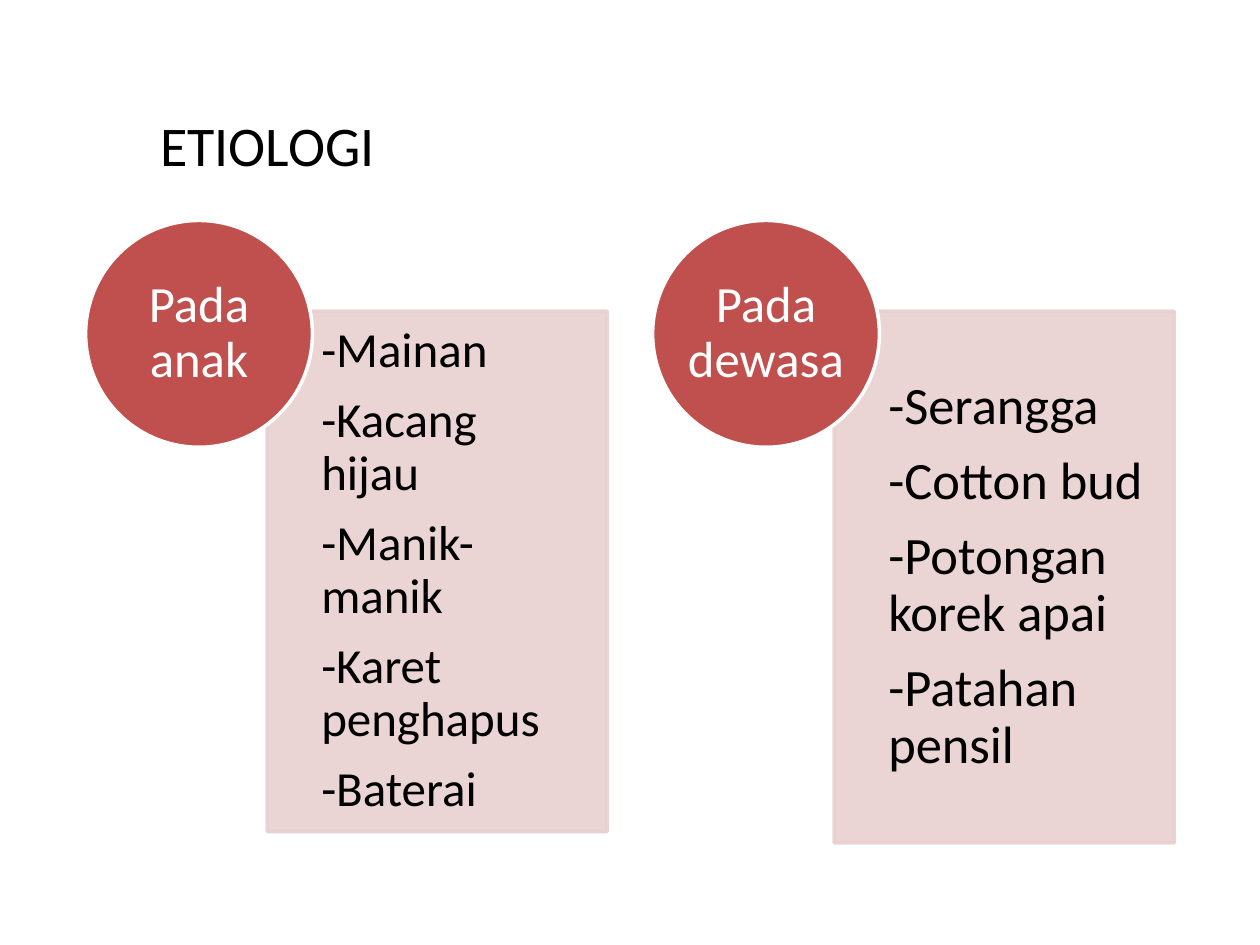
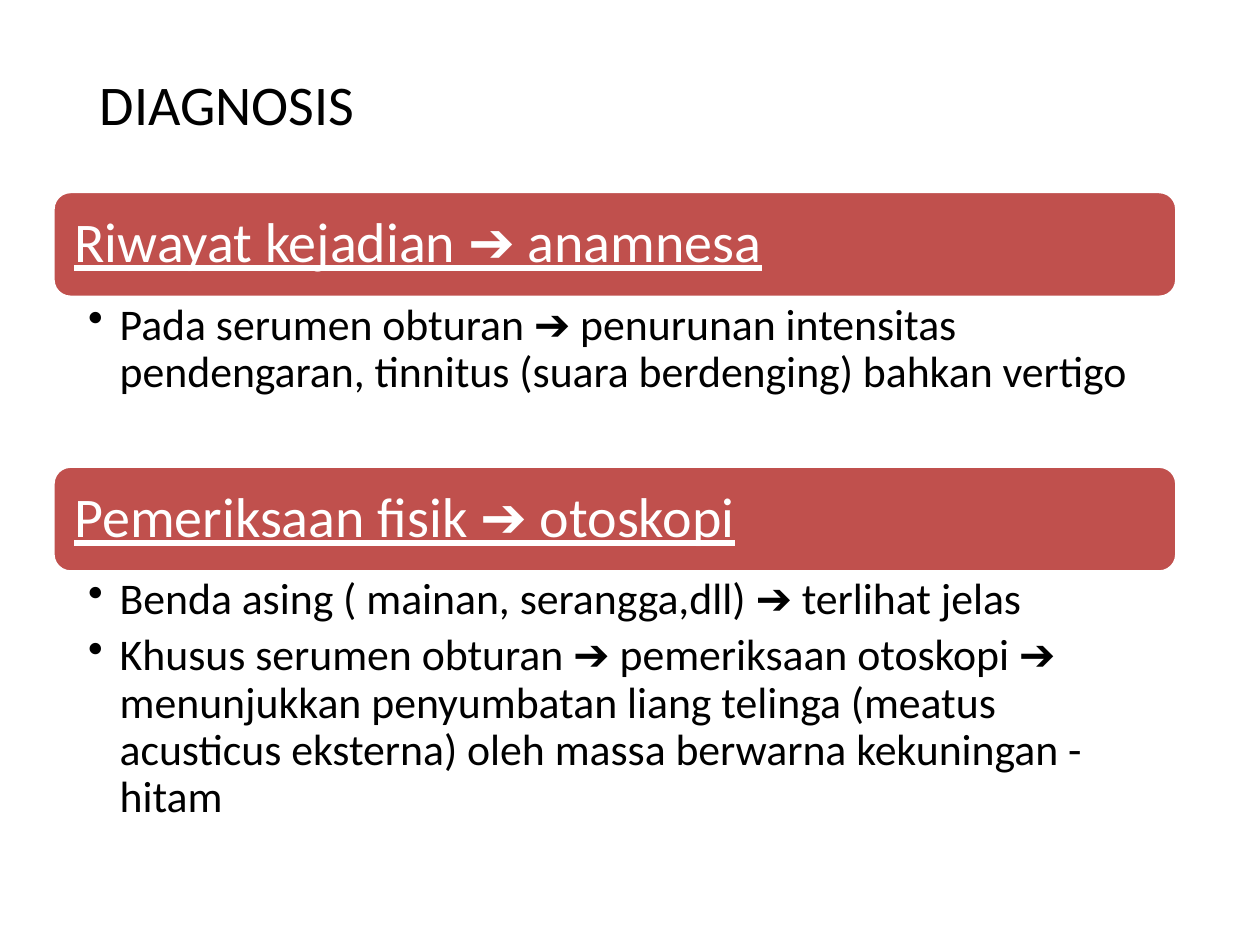
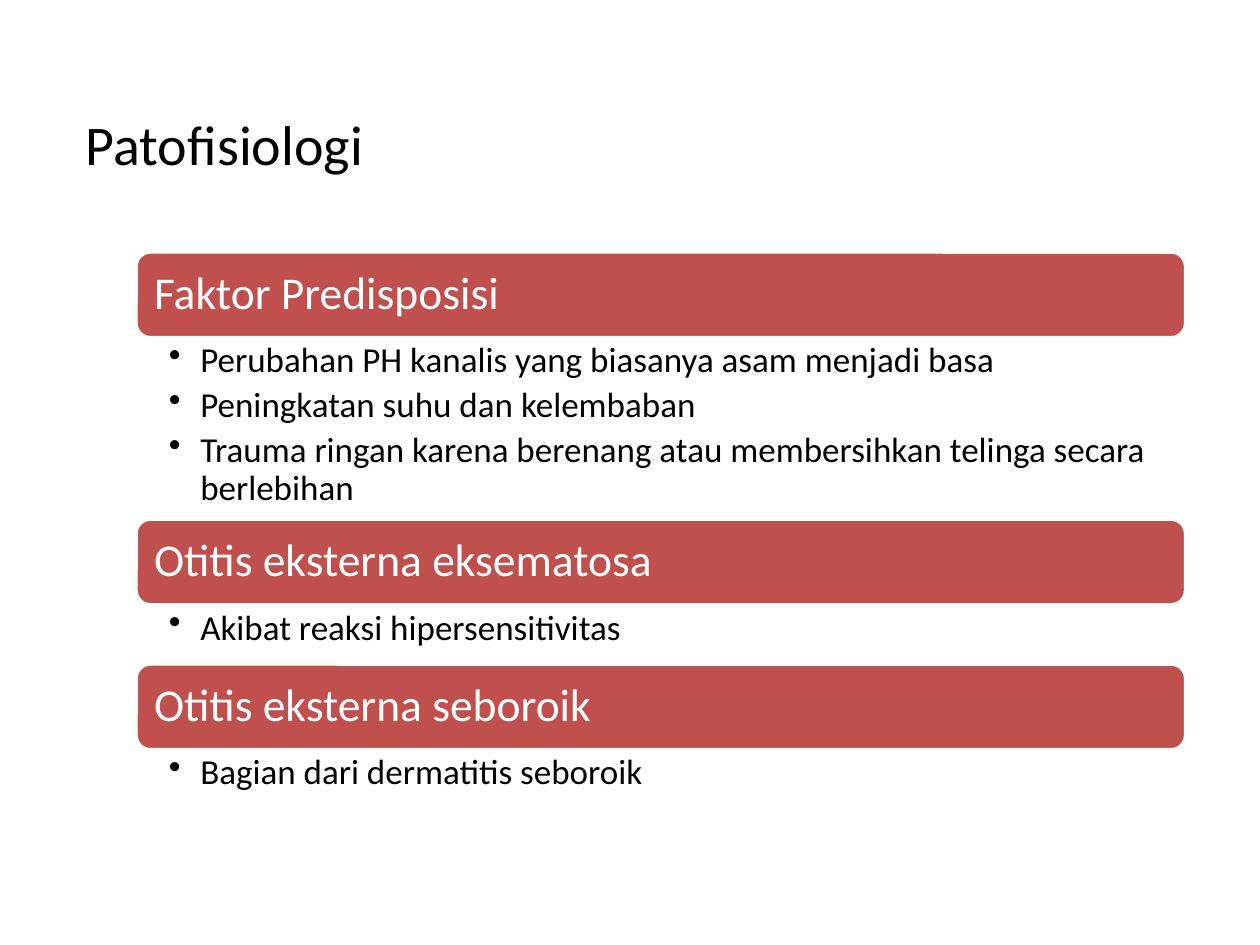
from lxml import etree
from pptx import Presentation
from pptx.dml.color import RGBColor
from pptx.enum import shapes, text
from pptx.oxml.ns import qn
from pptx.util import Inches, Pt

RED = RGBColor(0xC0, 0x50, 0x4D)
PINK = RGBColor(0xE8, 0xD0, 0xD0)
WHITE = RGBColor(0xFF, 0xFF, 0xFF)
BLACK = RGBColor(0, 0, 0)
FONT = "Calibri"
TOP, MIDDLE = text.MSO_ANCHOR.TOP, text.MSO_ANCHOR.MIDDLE
LEFT, CENTER = text.PP_ALIGN.LEFT, text.PP_ALIGN.CENTER


def write_text(frame, lines, size, color=BLACK, align=LEFT, anchor=TOP,
               insets=(0.1, 0.05, 0.1, 0.05), spacing=0.9, after=0.35,
               underline=False, bullet=False):
    """Fill a frame; insets are left, top, right, bottom, after is a share of size."""
    frame.word_wrap = True
    frame.auto_size = text.MSO_AUTO_SIZE.NONE
    frame.vertical_anchor = anchor
    (frame.margin_left, frame.margin_top,
     frame.margin_right, frame.margin_bottom) = map(Inches, insets)
    for index, line in enumerate(lines):
        paragraph = frame.add_paragraph() if index else frame.paragraphs[0]
        if bullet:
            paragraph.level = 1
            properties = paragraph._p.get_or_add_pPr()
            properties.set("marL", str(Inches(0.25)))
            properties.set("indent", str(Inches(-0.25)))
            etree.SubElement(properties, qn("a:buChar")).set("char", "•")
        paragraph.alignment = align
        paragraph.line_spacing = spacing
        paragraph.space_after = Pt(round(size * after, 1))
        run = paragraph.add_run()
        run.text = line
        run.font.name = FONT
        run.font.size = Pt(size)
        run.font.color.rgb = color
        run.font.underline = underline


class Deck:
    def __init__(self):
        self.presentation = Presentation()
        self.presentation.slide_width = Inches(10)
        self.presentation.slide_height = Inches(7.5)
        self.slide = None

    def new_slide(self, heading, left, top, width=7.54, height=1.18):
        self.slide = self.presentation.slides.add_slide(
            self.presentation.slide_layouts[5])
        title = self.slide.shapes.title
        title.left, title.top = Inches(left), Inches(top)
        title.width, title.height = Inches(width), Inches(height)
        write_text(title.text_frame, [heading], 32, spacing=1, after=0)

    def block(self, kind, left, top, width, height, fill, line, opacity=100):
        shape = self.slide.shapes.add_shape(
            kind, Inches(left), Inches(top), Inches(width), Inches(height))
        shape.shadow.inherit = False
        shape.fill.solid()
        shape.fill.fore_color.rgb = fill
        shape.line.color.rgb = line
        shape.line.width = Pt(2)
        if opacity < 100:
            for color in shape._element.spPr.iter(qn("a:srgbClr")):
                etree.SubElement(color, qn("a:alpha")).set("val", str(opacity * 1000))
        return shape.text_frame

    def cause_group(self, left, label, causes, height, size, inset):
        """Pale panel of causes with a round label over its corner."""
        panel = self.block(shapes.MSO_SHAPE.RECTANGLE, left + 1.44, 2.47, 2.7,
                           height, PINK, PINK, opacity=90)
        write_text(panel, causes, size, anchor=MIDDLE,
                   insets=(0.43, inset, inset, inset))
        circle = self.block(shapes.MSO_SHAPE.OVAL, left, 1.75, 1.8, 1.8, RED, WHITE)
        write_text(circle, [label], 29, WHITE, CENTER, MIDDLE, (0, 0, 0, 0))

    def bar(self, heading, left, top, width, height, size, inset, underline):
        frame = self.block(shapes.MSO_SHAPE.ROUNDED_RECTANGLE, left, top, width,
                           height, RED, WHITE)
        write_text(frame, [heading], size, WHITE, anchor=MIDDLE,
                   insets=(inset,) * 4, underline=underline)

    def bullets(self, points, left, top, width, height, size, insets):
        box = self.slide.shapes.add_textbox(
            Inches(left), Inches(top), Inches(width), Inches(height))
        write_text(box.text_frame, points, size, insets=insets, after=0.2, bullet=True)

    def sections(self, items, left, top, width, bar_height, bar_size, bar_inset,
                 body_size, body_insets, underline=False):
        """Stack bars, each followed at once by its bullets."""
        for heading, points, body_height in items:
            self.bar(heading, left, top, width, bar_height, bar_size, bar_inset,
                     underline)
            top += bar_height
            self.bullets(points, left, top, width, body_height, body_size, body_insets)
            top += body_height


def main():
    deck = Deck()

    # Causes
    deck.new_slide("ETIOLOGI", 1.17, 0.83, 2.21, 0.64)
    deck.cause_group(0.68, "Pada anak",
                     ["-Mainan", "-Kacang hijau", "-Manik-manik",
                      "-Karet penghapus", "-Baterai"], 4.13, 28, 0.22)
    deck.cause_group(5.18, "Pada dewasa",
                     ["-Serangga", "-Cotton bud", "-Potongan korek apai",
                      "-Patahan pensil"], 4.22, 30, 0.23)

    # Diagnosis
    deck.new_slide("DIAGNOSIS", 0.69, 0.5)
    deck.sections([
        ("Riwayat kejadian ➔ anamnesa",
         ["Pada serumen obturan ➔ penurunan intensitas pendengaran, tinnitus "
          "(suara berdenging) bahkan vertigo"], 1.34),
        ("Pemeriksaan fisik ➔ otoskopi",
         ["Benda asing ( mainan, serangga,dll) ➔ terlihat jelas",
          "Khusus serumen obturan ➔ pemeriksaan otoskopi ➔ menunjukkan "
          "penyumbatan liang telinga (meatus acusticus eksterna) oleh massa "
          "berwarna kekuningan - hitam"], 2.61),
    ], left=0.42, top=1.52, width=8.92, bar_height=0.84, bar_size=32, bar_inset=0.13,
        body_size=25, body_insets=(0.28, 0.04, 0.25, 0.04), underline=True)

    # Pathophysiology
    deck.new_slide("Patofisiologi", 0.58, 0.82)
    deck.sections([
        ("Faktor Predisposisi",
         ["Perubahan PH kanalis yang biasanya asam menjadi basa",
          "Peningkatan suhu dan kelembaban",
          "Trauma ringan karena berenang atau membersihkan telinga secara "
          "berlebihan"], 1.44),
        ("Otitis eksterna eksematosa", ["Akibat reaksi hipersensitivitas"], 0.47),
        ("Otitis eksterna seboroik", ["Bagian dari dermatitis seboroik"], 0.47),
    ], left=1.08, top=2, width=8.33, bar_height=0.68, bar_size=26, bar_inset=0.11,
        body_size=20, body_insets=(0.26, 0.04, 0.2, 0.04))

    deck.presentation.save("out.pptx")


if __name__ == "__main__":
    main()
